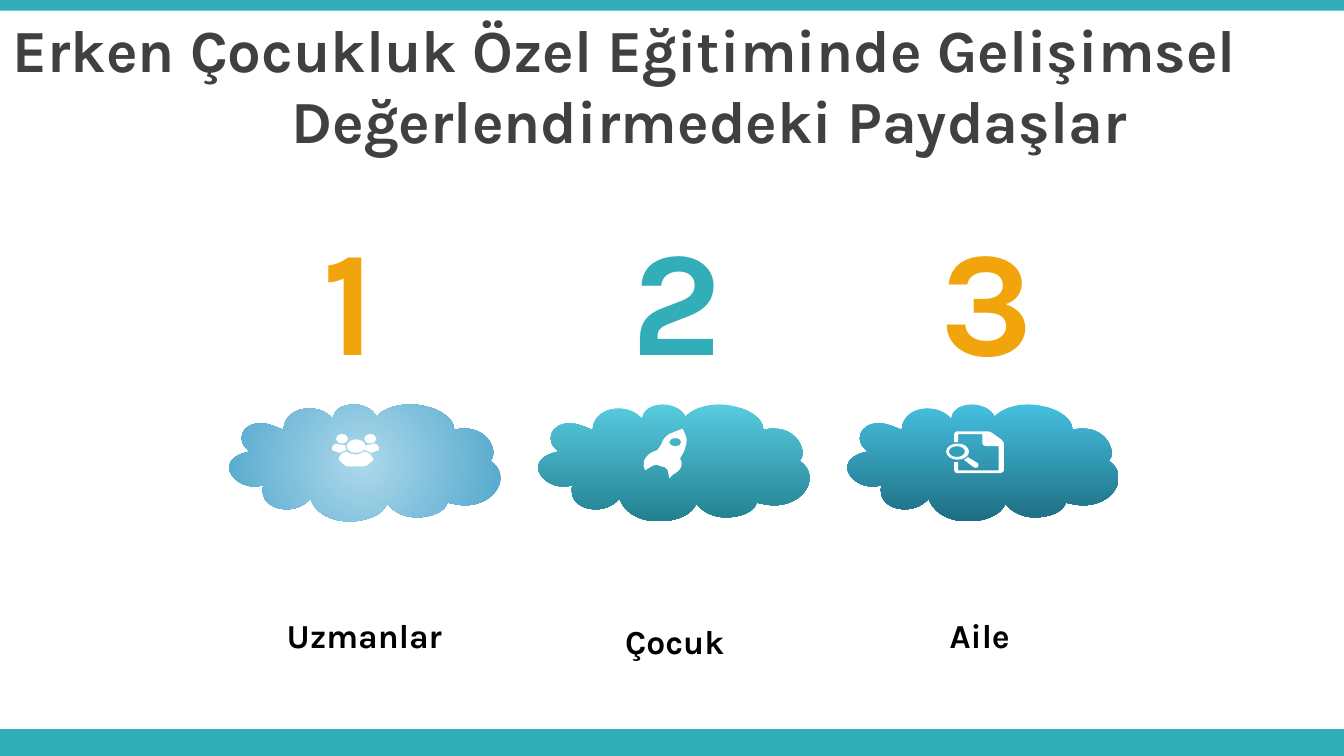
from collections import namedtuple
from dataclasses import dataclass

from lxml import etree
from pptx import Presentation
from pptx import util as u
from pptx.dml.color import RGBColor
from pptx.enum import shapes, text
from pptx.oxml.ns import qn

Box = namedtuple("Box", "left top width height")
Stakeholder = namedtuple("Stakeholder", "number name color gradient radial icon icon_at name_shift")


@dataclass(frozen=True)
class Theme:
    font: str = "Karla"
    teal: str = "32AEB8"
    orange: str = "F2A40D"
    title: str = "404040"
    label: str = "000000"
    icon: str = "FFFFFF"
    title_size: int = 32
    number_size: int = 80
    label_size: int = 18


THEME = Theme()
WIDTH = 10
HEIGHT = WIDTH * 9 / 16
COLUMN_LEFT, COLUMN_PITCH, COLUMN_TOP = 1.59, 2.3, 1.78


def oval(left, top, width, height):
    """Return a closed outline of four curves."""
    x, y = left + width / 2, top + height / 2
    right, bottom = left + width, top + height
    dx, dy = 0.276 * width, 0.276 * height
    return (f"M {x} {top} C {x + dx} {top} {right} {y - dy} {right} {y} "
            f"C {right} {y + dy} {x + dx} {bottom} {x} {bottom} "
            f"C {x - dx} {bottom} {left} {y + dy} {left} {y} "
            f"C {left} {y - dy} {x - dx} {top} {x} {top} Z ")


# Outlines are in hundredths of an inch.
CLOUD = (
    "M 104 0 C 96 0 89 4 89 11 C 84 5 77 3 71 3 C 61 3 52 9 52 19 "
    "C 45 16 40 14 35 14 C 20 14 16 28 27 35 C 0 40 13 61 30 61 "
    "C 32 61 34 61 37 60 C 34 71 43 78 54 78 C 60 78 67 76 72 70 "
    "C 76 82 89 87 101 87 C 114 87 126 82 129 74 C 135 81 143 84 151 84 "
    "C 162 84 172 80 174 73 C 178 74 183 75 187 75 C 210 75 222 53 206 42 "
    "C 212 36 205 18 187 18 C 185 18 182 18 179 19 C 179 8 162 0 146 0 "
    "C 136 0 127 3 121 9 C 118 3 111 0 104 0 Z")
PEOPLE = (
    "M 3 7 C 1 7 0 9 0 12 L 6 14 C 8 13 9 12 11 12 C 10 11 10 10 10 8 C 8 8 5 8 3 7 Z",
    oval(3, 0, 9, 7),
    "M 11 13 C 8 13 5 16 5 19 C 5 19 10 24 11 24 L 24 24 C 26 24 31 19 31 19 "
    "C 30 16 27 13 24 13 C 20 16 15 16 11 13 Z",
    oval(11, 4, 14, 10),
    oval(24, 0, 9, 7),
    "M 32 7 C 34 7 35 9 35 12 L 29 14 C 27 13 26 12 24 12 C 25 11 25 10 25 8 C 27 8 30 8 32 7 Z",
)
ROCKET = (
    oval(20, 7, 9, 6) +
    "M 30 0 C 30 0 22 3 20 4 C 17 6 15 8 14 12 L 11 16 C 4 18 0 23 1 28 L 2 31 L 7 28 "
    "C 8 27 10 27 11 27 C 12 27 13 27 14 28 C 16 28 18 29 19 31 L 20 37 L 23 34 "
    "C 29 31 31 26 28 22 L 31 17 C 32 14 33 11 33 8 C 33 6 30 0 30 0 Z",
)
SEARCHED_PAGE = (
    "M 8 0 C 7 0 6 1 6 2 L 6 8 C 7 8 8 8 9 8 L 9 2 L 27 2 L 27 9 C 27 10 28 11 30 11 "
    "L 39 11 L 39 29 L 9 29 L 9 23 C 8 23 7 23 6 23 L 6 29 C 6 30 7 31 8 31 L 40 31 "
    "C 42 31 43 30 43 29 L 43 9 C 43 8 42 7 41 6 L 34 1 C 33 0 32 0 30 0 Z",
    oval(2, 11, 12, 8) + oval(0, 9, 17, 12),
    "M 16 19 C 16 20 14 21 13 21 L 21 27 C 22 27 23 27 23 27 L 24 26 "
    "C 24 25 24 25 24 24 L 16 19 Z",
)

STAKEHOLDERS = (
    Stakeholder("1", "Uzmanlar", THEME.orange, ("ADD8EB", "4BA4CA"), True,
                PEOPLE, (0.88, 0.22), (0, 0)),
    Stakeholder("2", "Çocuk", THEME.teal, ("58CBDF", "238191"), False,
                ROCKET, (0.89, 0.18), (0.01, 0.05)),
    Stakeholder("3", "Aile", THEME.orange, ("45BFDE", "1E6E83"), False,
                SEARCHED_PAGE, (0.85, 0.2), (-0.02, 0)),
)


def fill_solid(shape, color):
    shape.fill.solid()
    shape.fill.fore_color.rgb = RGBColor.from_string(color)


def fill_gradient(shape, colors, radial):
    shape.fill.gradient()
    shape.fill.gradient_angle = 270
    for stop, color in zip(shape.fill.gradient_stops, colors):
        stop.color.rgb = RGBColor.from_string(color)
    if radial:
        line = shape._element.find(".//" + qn("a:lin"))
        circle = etree.Element(qn("a:path"), {"path": "circle"})
        etree.SubElement(circle, qn("a:fillToRect"), dict.fromkeys("ltrb", "50000"))
        line.getparent().replace(line, circle)


def add_outline(page, outline, left, top):
    """Draw a curved freeform; its coordinates start from left and top."""
    steps = []
    for token in outline.split():
        if token.isalpha():
            steps.append((token, []))
        else:
            steps[-1][1].append(round(float(token) * 10))
    steps = [(kind, list(zip(v[::2], v[1::2]))) for kind, v in steps]
    points = [point for _, group in steps for point in group]
    builder = page.shapes.build_freeform(*points[0], scale=u.Inches(1) / 1000)
    builder.add_line_segments(points[1:])
    shape = builder.convert_to_shape(u.Inches(left), u.Inches(top))
    min_x, min_y = (min(axis) for axis in zip(*points))
    contour = shape._element.find(".//" + qn("a:path"))
    for child in list(contour):
        contour.remove(child)
    tags = {"M": "a:moveTo", "L": "a:lnTo", "C": "a:cubicBezTo", "Z": "a:close"}
    for kind, group in steps:
        step = etree.SubElement(contour, qn(tags[kind]))
        for x, y in group:
            etree.SubElement(step, qn("a:pt"), {"x": str(x - min_x), "y": str(y - min_y)})
    shape.shadow.inherit = False
    shape.line.fill.background()
    return shape


def add_text_frame(page, box, inset_y=0.1):
    frame = page.shapes.add_textbox(*map(u.Inches, box)).text_frame
    frame.word_wrap = True
    frame.vertical_anchor = text.MSO_ANCHOR.MIDDLE
    frame.margin_left = frame.margin_right = u.Inches(0.1)
    frame.margin_top = frame.margin_bottom = u.Inches(inset_y)
    return frame


def write(para, words, size, color, align):
    para.alignment = align
    span = para.add_run()
    span.text = words
    span.font.name, span.font.size, span.font.bold = THEME.font, u.Pt(size), True
    span.font.color.rgb = RGBColor.from_string(color)


def add_band(page, box):
    band = page.shapes.add_shape(shapes.MSO_SHAPE.RECTANGLE, *map(u.Inches, box))
    band.shadow.inherit = False
    band.line.fill.background()
    fill_solid(band, THEME.teal)


def add_title(page, box):
    """Set one centred paragraph whose second line hangs to the right."""
    frame = add_text_frame(page, box, 0)
    frame.margin_left = u.Inches(0.05)
    para = frame.paragraphs[0]
    write(para, "Erken Çocukluk Özel Eğitiminde Gelişimsel Değerlendirmedeki Paydaşlar",
          THEME.title_size, THEME.title, text.PP_ALIGN.CENTER)
    for side, inches in (("marL", 1.26), ("marR", 0.65), ("indent", -1.26)):
        para._p.get_or_add_pPr().set(side, str(u.Inches(inches)))


def add_stakeholder(page, box, item):
    """Stack the number, the cloud with its icon, and the name."""
    align = text.PP_ALIGN.LEFT if item.number == "1" else text.PP_ALIGN.CENTER
    number = add_text_frame(page, Box(box.left + 0.71, box.top, 0.71, 0.84))
    write(number.paragraphs[0], item.number, THEME.number_size, item.color, align)

    cloud_top = box.top + 1.23
    fill_gradient(add_outline(page, CLOUD, box.left, cloud_top), item.gradient, item.radial)
    for part in item.icon:
        shape = add_outline(page, part, box.left + item.icon_at[0], cloud_top + item.icon_at[1])
        fill_solid(shape, THEME.icon)

    dx, dy = item.name_shift
    name = add_text_frame(page, Box(box.left + 0.16 + dx, box.top + 2.6 + dy, 1.92, 0.64))
    name.paragraphs[0].line_spacing = 1.15
    write(name.paragraphs[0], item.name, THEME.label_size, THEME.label, text.PP_ALIGN.CENTER)


def main():
    deck = Presentation()
    deck.slide_width, deck.slide_height = u.Inches(WIDTH), u.Inches(HEIGHT)
    page = deck.slides.add_slide(deck.slide_layouts[6])
    add_band(page, Box(0, HEIGHT - 0.2, WIDTH, 0.2))
    add_band(page, Box(0, 0, WIDTH, 0.08))
    add_title(page, Box(0, 0.38, WIDTH, 0.49))
    for index, item in enumerate(STAKEHOLDERS):
        left = COLUMN_LEFT + index * COLUMN_PITCH
        add_stakeholder(page, Box(left, COLUMN_TOP, COLUMN_PITCH, 3.24), item)
    deck.save("out.pptx")


if __name__ == "__main__":
    main()
